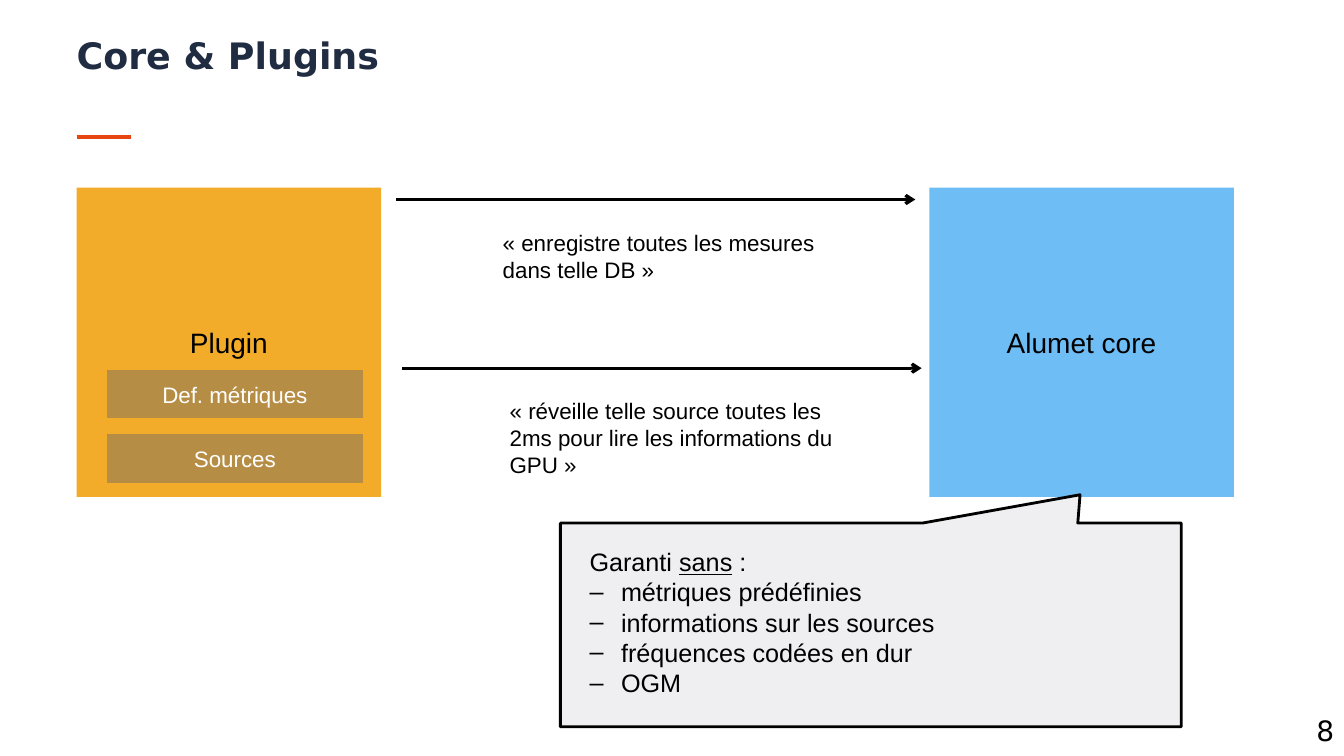
from lxml import etree
from pptx import Presentation
from pptx.dml.color import RGBColor
from pptx.enum.shapes import MSO_CONNECTOR, MSO_SHAPE
from pptx.enum.text import MSO_ANCHOR, PP_ALIGN
from pptx.oxml.ns import qn
from pptx.util import Pt

RECTANGLE, PROCESS = MSO_SHAPE.RECTANGLE, MSO_SHAPE.FLOWCHART_PROCESS
CALLOUT = MSO_SHAPE.RECTANGULAR_CALLOUT
STRAIGHT = MSO_CONNECTOR.STRAIGHT
MIDDLE = MSO_ANCHOR.MIDDLE
LEFT, CENTER, RIGHT = PP_ALIGN.LEFT, PP_ALIGN.CENTER, PP_ALIGN.RIGHT
BLACK = "000000"
MARGIN = 54.7


def color(hex_string):
    return RGBColor.from_string(hex_string)


def write(shape, text, size, text_color=BLACK, name="Arial", align=LEFT):
    """Fill the shape with one wrapped paragraph and return that paragraph."""
    shape.text_frame.word_wrap = True
    paragraph = shape.text_frame.paragraphs[0]
    paragraph.text = text
    paragraph.alignment = align
    paragraph.font.size = Pt(size)
    paragraph.font.name = name
    paragraph.font.color.rgb = color(text_color)
    return paragraph


presentation = Presentation()
presentation.slide_width, presentation.slide_height = Pt(960), Pt(540)
slide = presentation.slides.add_slide(presentation.slide_layouts[6])
shapes = slide.shapes

# Page number and title
page_number = shapes.add_textbox(Pt(835.6), Pt(506.2), Pt(124.4), Pt(33.8))
write(page_number, "8", 20, name="DejaVu Sans", align=RIGHT)

title = shapes.add_textbox(Pt(MARGIN), Pt(23.8), Pt(691), Pt(65.5))
title.text_frame.margin_left = 0
title_paragraph = write(title, "Core & Plugins", 26, "202C41", "DejaVu Sans")
title_paragraph.font.bold = True
title_paragraph.line_spacing = 0.9

# Plugin and core blocks, with the parts of the plugin
blocks = [
    (RECTANGLE, "Plugin", MARGIN, 134, 217.5, 221, "F2AC29", 20, BLACK),
    (RECTANGLE, "Alumet core", 663.8, 134, 217.5, 221, "6EBDF5", 20, BLACK),
    (PROCESS, "Sources", 76.3, 310.3, 183, 34.6, "B68D44", 16, "FFFFFF"),
    (PROCESS, "Def. métriques", 76.3, 264.3, 183, 34.6, "B68D44", 16, "FFFFFF"),
]
for kind, label, left, top, width, height, fill, size, text_color in blocks:
    block = shapes.add_shape(kind, Pt(left), Pt(top), Pt(width), Pt(height))
    block.shadow.inherit = False
    block.fill.solid()
    block.fill.fore_color.rgb = color(fill)
    block.line.fill.background()
    block.text_frame.vertical_anchor = MIDDLE
    write(block, label, size, text_color, align=CENTER)

# Title rule and arrows from plugin to core
lines = [
    (MARGIN, 93.4, 97.9, "E74610", False),
    (283, 653.8, 142.5, BLACK, True),
    (287.5, 658.3, 263, BLACK, True),
]
for start, end, y, line_color, has_arrow in lines:
    line = shapes.add_connector(STRAIGHT, Pt(start), Pt(y), Pt(end), Pt(y))
    line.line.color.rgb = color(line_color)
    line.line.width = Pt(2.25)
    if has_arrow:
        etree.SubElement(line.line._get_or_add_ln(), qn("a:tailEnd"), type="arrow")
    etree.SubElement(line._element.spPr, qn("a:effectLst"))

messages = [
    ("« enregistre toutes les mesures dans telle DB »", 352, 160, 250.6, 45.4),
    ("« réveille telle source toutes les 2ms pour lire les informations du GPU »",
     357, 280, 252, 64.8),
]
for message, left, top, width, height in messages:
    message_box = shapes.add_textbox(Pt(left), Pt(top), Pt(width), Pt(height))
    write(message_box, message, 16)

# Callout on the core
callout = shapes.add_shape(CALLOUT, Pt(400.3), Pt(373.6), Pt(443.5), Pt(145.5))
callout.shadow.inherit = False
callout.adjustments[0], callout.adjustments[1] = 0.337, -0.639
callout.fill.solid()
callout.fill.fore_color.rgb = color("EFEFF1")
callout.line.color.rgb = color(BLACK)
callout.line.width = Pt(2)

guarantees = shapes.add_textbox(Pt(414), Pt(386.8), Pt(425.5), Pt(115.2))
heading = write(guarantees, "Garanti ", 18)
underlined = heading.add_run()
underlined.text = "sans"
underlined.font.underline = True
heading.add_run().text = " :"
for run in heading.runs:
    run.font.size = Pt(18)

for item in ["métriques prédéfinies", "informations sur les sources",
             "fréquences codées en dur", "OGM"]:
    paragraph = guarantees.text_frame.add_paragraph()
    paragraph.text = item
    properties = paragraph._p.get_or_add_pPr()
    properties.set("marL", str(Pt(22.5)))
    properties.set("indent", str(-Pt(22.5)))
    etree.SubElement(properties, qn("a:buFont"), typeface="Arial")
    etree.SubElement(properties, qn("a:buChar"), char="–")
    paragraph.font.size = Pt(18)
    paragraph.font.name = "Arial"
    paragraph.font.color.rgb = color(BLACK)

presentation.save("out.pptx")
